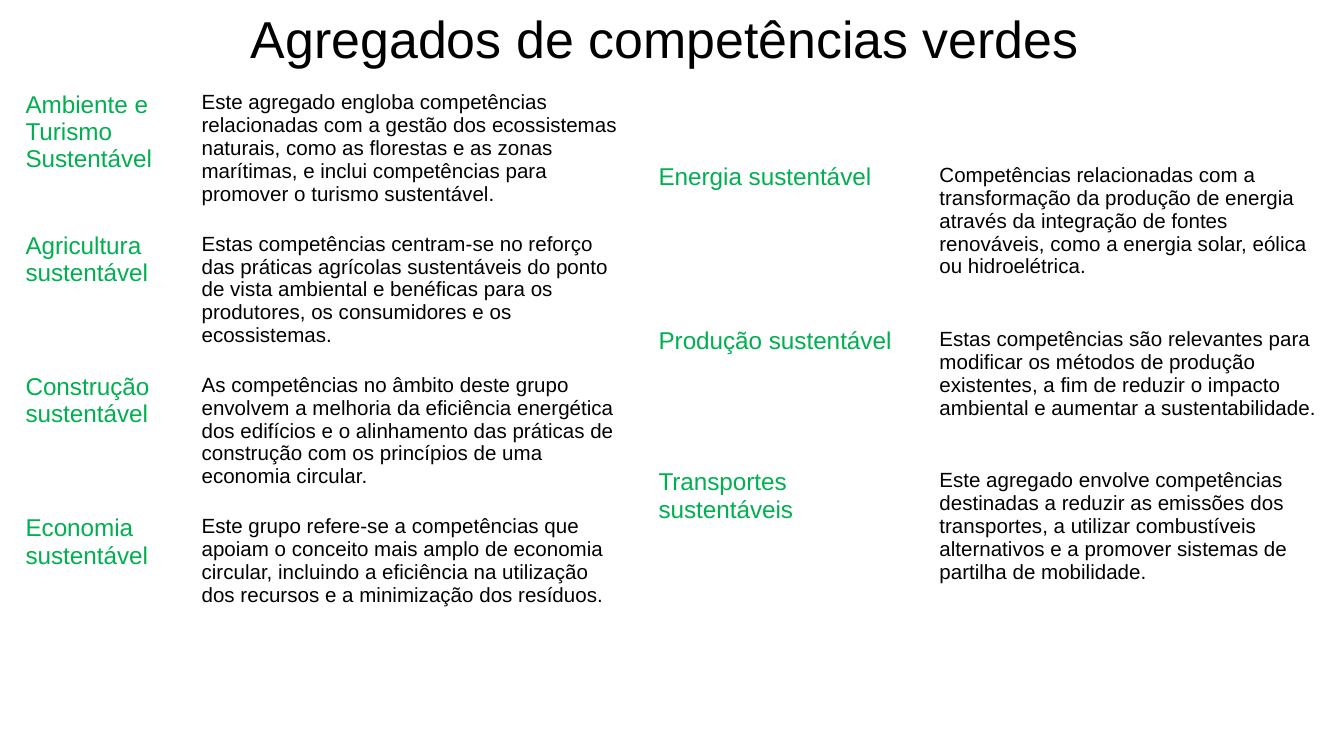
import pptx
import pptx.util
import pptx.dml.color
import pptx.enum.text

Inches, Pt = pptx.util.Inches, pptx.util.Pt
RGB = pptx.dml.color.RGBColor.from_string

# Content
TITLE = "Agregados de competências verdes"
LEFT_ROWS = [
    ("Ambiente e Turismo Sustentável",
     "Este agregado engloba competências relacionadas com a gestão dos ecossistemas naturais, como as florestas e as zonas marítimas, e inclui competências para promover o turismo sustentável."),
    ("Agricultura sustentável",
     "Estas competências centram-se no reforço das práticas agrícolas sustentáveis do ponto de vista ambiental e benéficas para os produtores, os consumidores e os ecossistemas."),
    ("Construção sustentável",
     "As competências no âmbito deste grupo envolvem a melhoria da eficiência energética dos edifícios e o alinhamento das práticas de construção com os princípios de uma economia circular."),
    ("Economia sustentável",
     "Este grupo refere-se a competências que apoiam o conceito mais amplo de economia circular, incluindo a eficiência na utilização dos recursos e a minimização dos resíduos."),
]
RIGHT_ROWS = [
    ("Energia sustentável",
     "Competências relacionadas com a transformação da produção de energia através da integração de fontes renováveis, como a energia solar, eólica ou hidroelétrica."),
    ("Produção sustentável",
     "Estas competências são relevantes para modificar os métodos de produção existentes, a fim de reduzir o impacto ambiental e aumentar a sustentabilidade."),
    ("Transportes sustentáveis",
     "Este agregado envolve competências destinadas a reduzir as emissões dos transportes, a utilizar combustíveis alternativos e a promover sistemas de partilha de mobilidade."),
]
# Each table: left, top, column widths, row heights, rows
TABLES = [
    (0.09, 0.58, (1.31, 3.34), (0.99,) * 4, LEFT_ROWS),
    (4.8, 1.12, (2.09, 3.06), (1.22, 1.05, 0.95), RIGHT_ROWS),
]
THEME = {
    "font": "Arial", "background": "FFFFFF", "text": "000000", "accent": "00B050",
    "title_size": 27.8, "term_size": 13, "body_size": 11, "padding": 0.1,
}


def format_text(tf, size, color):
    for p in tf.paragraphs:
        for r in p.runs:
            r.font.name = THEME["font"]
            r.font.size = Pt(size)
            r.font.color.rgb = RGB(color)


def add_definitions(s, left, top, widths, heights, rows):
    frame = s.shapes.add_table(len(rows), len(widths), Inches(left), Inches(top),
                               Inches(sum(widths)), Inches(sum(heights)))
    table = frame.table
    table.first_row = table.horz_banding = False
    for column, width in zip(table.columns, widths):
        column.width = Inches(width)
    styles = ((THEME["term_size"], THEME["accent"]), (THEME["body_size"], THEME["text"]))
    for row, height, texts in zip(table.rows, heights, rows):
        row.height = Inches(height)
        for cell, text, style in zip(row.cells, texts, styles):
            cell.text = text
            cell.fill.solid()
            cell.fill.fore_color.rgb = RGB(THEME["background"])
            cell.margin_left = cell.margin_right = Inches(THEME["padding"])
            cell.margin_top = cell.margin_bottom = Inches(THEME["padding"])
            format_text(cell.text_frame, *style)


def main():
    prs = pptx.Presentation()
    prs.slide_width = Inches(10)
    prs.slide_height = prs.slide_width * 9 // 16
    s = prs.slides.add_slide(prs.slide_layouts[5])
    s.background.fill.solid()
    s.background.fill.fore_color.rgb = RGB(THEME["background"])

    # Title
    title = s.shapes.title
    title.left, title.top = Inches(0.25), Inches(0.05)
    title.width, title.height = Inches(9.4), Inches(0.73)
    tf = title.text_frame
    tf.text = TITLE
    tf.word_wrap = True
    tf.auto_size = pptx.enum.text.MSO_AUTO_SIZE.NONE
    tf.vertical_anchor = pptx.enum.text.MSO_ANCHOR.TOP
    tf.margin_left = tf.margin_right = tf.margin_top = tf.margin_bottom = 0
    tf.paragraphs[0].alignment = pptx.enum.text.PP_ALIGN.CENTER
    format_text(tf, THEME["title_size"], THEME["text"])

    # Definition tables
    for table in TABLES:
        add_definitions(s, *table)

    prs.save("out.pptx")


if __name__ == "__main__":
    main()
